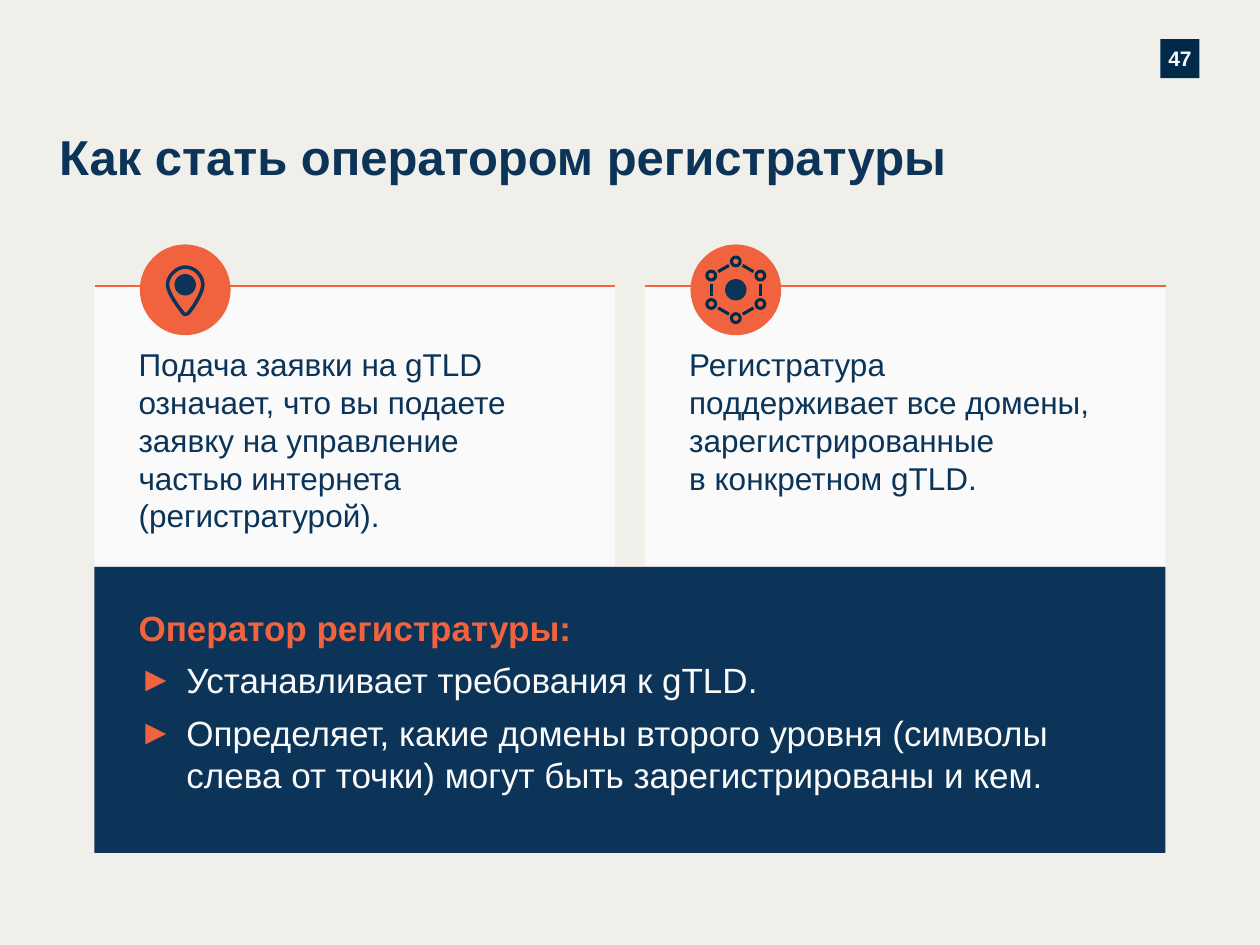
import math

from lxml import etree
from pptx import Presentation
from pptx import util as u
from pptx.dml.color import RGBColor
from pptx.enum import shapes, text
from pptx.oxml.ns import qn

PX = 9144  # 100 px to the inch
NAVY, INK, ORANGE, WHITE = "0B3458", "002B49", "F1633E", "FAFAFA"


def rgb(code):
    return RGBColor.from_string(code)


def style(shape, fill=None, line=None, width=0):
    shape.shadow.inherit = False
    if fill:
        shape.fill.solid()
        shape.fill.fore_color.rgb = rgb(fill)
    else:
        shape.fill.background()
    if line:
        shape.line.color.rgb = rgb(line)
        shape.line.width = u.Pt(width)
    else:
        shape.line.fill.background()


deck = Presentation()
deck.slide_width, deck.slide_height = 1000 * PX, 750 * PX
page = deck.slides.add_slide(deck.slide_layouts[6])
page.background.fill.solid()
page.background.fill.fore_color.rgb = rgb("F1EFEA")

# Text blocks: place, fill, insets, anchor, paragraphs of (text, size, colour, bold, bulleted)
TOP, MIDDLE = text.MSO_ANCHOR.TOP, text.MSO_ANCHOR.MIDDLE
CARD_INSETS = (35, 47, 39, 30)
blocks = [
    ((921, 31, 31, 31), "002A49", (0, 0, 0, 0), MIDDLE,
     [("47", 12, WHITE, True, False)]),
    ((47, 98, 815, 52), None, (0, 0, 0, 0), MIDDLE,
     [("Как стать оператором регистратуры", 28, NAVY, True, False)]),
    ((75, 227, 413, 222), WHITE, CARD_INSETS, TOP,
     [("Подача заявки на gTLD означает, что вы подаете заявку на управление "
       "частью интернета (регистратурой).", 18, NAVY, False, False)]),
    ((512, 227, 413, 222), WHITE, CARD_INSETS, TOP,
     [("Регистратура \nподдерживает все домены, зарегистрированные \n"
       "в конкретном gTLD.", 18, NAVY, False, False)]),
    ((75, 450, 850, 227), NAVY, (35, 31, 47, 30), TOP,
     [("Оператор регистратуры:", 20, ORANGE, True, False),
      ("Устанавливает требования к gTLD.", 20, WHITE, False, True),
      ("Определяет, какие домены второго уровня (символы слева от точки) "
       "могут быть зарегистрированы и кем.", 20, WHITE, False, True)]),
]
for place, fill, insets, anchor, paras in blocks:
    place = [n * PX for n in place]
    if fill:
        box = page.shapes.add_shape(shapes.MSO_SHAPE.RECTANGLE, *place)
        style(box, fill)
    else:
        box = page.shapes.add_textbox(*place)
    frame = box.text_frame
    frame.word_wrap = True
    frame.vertical_anchor = anchor
    (frame.margin_left, frame.margin_top,
     frame.margin_right, frame.margin_bottom) = [n * PX for n in insets]
    for i, (words, size, color, bold, bulleted) in enumerate(paras):
        para = frame.add_paragraph() if i else frame.paragraphs[0]
        para.alignment = text.PP_ALIGN.CENTER if words == "47" else text.PP_ALIGN.LEFT
        if bulleted:
            para.space_before = u.Pt(6)
            props = para._p.get_or_add_pPr()
            props.set("marL", str(38 * PX))
            props.set("indent", str(-38 * PX))
            bullet_color = etree.SubElement(props, qn("a:buClr"))
            etree.SubElement(bullet_color, qn("a:srgbClr"), val=ORANGE)
            etree.SubElement(props, qn("a:buFont"), typeface="Arial")
            etree.SubElement(props, qn("a:buChar"), char="►")
        for j, part in enumerate(words.split("\n")):
            if j:
                para.add_line_break()
            span = para.add_run()
            span.text = part
            span.font.name = "Arial"
            span.font.size = u.Pt(size)
            span.font.bold = bold
            span.font.color.rgb = rgb(color)

# Network icon: six nodes on a ring, with a short link between neighbours
RING_X, RING_Y, RING_R = 584, 230, 22.5
nodes = [(RING_X + RING_R * math.sin(math.radians(a)),
          RING_Y - RING_R * math.cos(math.radians(a))) for a in range(0, 360, 60)]
links = []
for (x1, y1), (x2, y2) in zip(nodes, nodes[1:] + nodes[:1]):
    ends = [(x1 + (x2 - x1) * t, y1 + (y2 - y1) * t) for t in (0.28, 0.72)]
    links.append((*ends[0], *ends[1], INK, 1.75))

# Card rules lie under the orange discs, links above them
rules = [(x, 227, x + 413, 227, ORANGE, 1.25) for x in (75, 512)]
discs = [(x, 230, 72, ORANGE, None, 0) for x in (147, RING_X)]
dots = [(147, 226, 17, NAVY, None, 0), (RING_X, 230, 17, NAVY, None, 0)]
rings = [(x, y, 7, None, INK, 1.75) for x, y in nodes]
for lines, circles in ((rules, discs), (links, rings + dots)):
    for x1, y1, x2, y2, color, width in lines:
        line = page.shapes.add_connector(
            shapes.MSO_CONNECTOR.STRAIGHT, *[round(n * PX) for n in (x1, y1, x2, y2)])
        line.line.color.rgb = rgb(color)
        line.line.width = u.Pt(width)
        etree.SubElement(line._element.spPr, qn("a:effectLst"))
    for x, y, size, fill, color, width in circles:
        circle = page.shapes.add_shape(
            shapes.MSO_SHAPE.OVAL, round((x - size / 2) * PX), round((y - size / 2) * PX),
            size * PX, size * PX)
        style(circle, fill, color, width)

# Map pin: outline sampled along its Bézier curves
pin = [(150, 248), (148, 250), (146, 250), (145, 248), (141, 243), (133, 232),
       (133, 226), (133, 219), (140, 212), (147, 212), (155, 212), (161, 219),
       (161, 226), (161, 232), (154, 243), (150, 248)]
outline = []
for k in range(0, len(pin) - 1, 3):
    for step in range(12):
        t = step / 12
        weights = ((1 - t) ** 3, 3 * t * (1 - t) ** 2, 3 * t * t * (1 - t), t ** 3)
        outline.append(tuple(
            round(PX * sum(w * p[axis] for w, p in zip(weights, pin[k:k + 4])))
            for axis in (0, 1)))
builder = page.shapes.build_freeform(*outline[0], scale=1.0)
builder.add_line_segments(outline[1:], close=True)
style(builder.convert_to_shape(), None, NAVY, 2)

deck.save("out.pptx")
